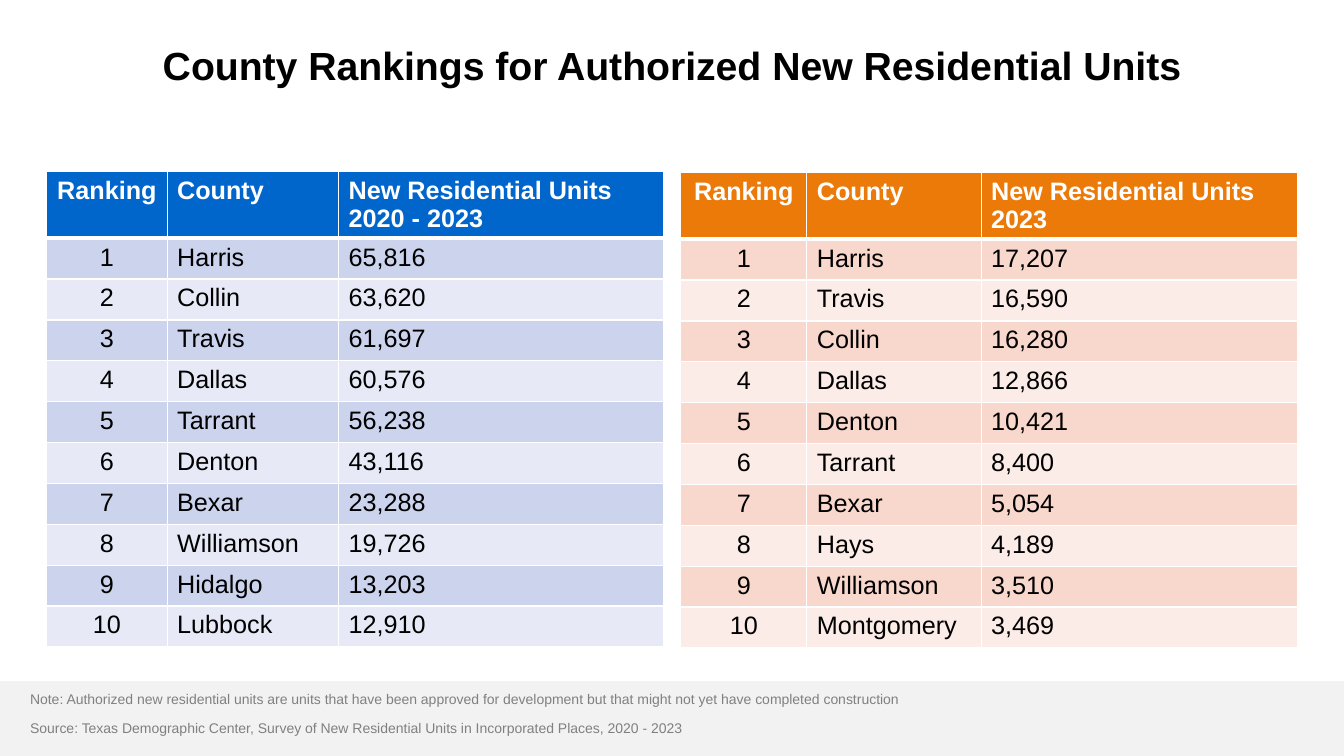
from lxml.etree import SubElement as Sub
from pptx import Presentation
from pptx.dml.color import RGBColor
from pptx.enum.shapes import MSO_SHAPE as Shape
from pptx.enum.text import MSO_ANCHOR as Anchor, PP_ALIGN as Align
from pptx.oxml.ns import qn
from pptx.util import Pt

WIDE, HIGH = 960, 540
HEAD, ROW = 47.2, 29.2

TOTAL = [
    ("Harris", "65,816"), ("Collin", "63,620"), ("Travis", "61,697"),
    ("Dallas", "60,576"), ("Tarrant", "56,238"), ("Denton", "43,116"),
    ("Bexar", "23,288"), ("Williamson", "19,726"), ("Hidalgo", "13,203"),
    ("Lubbock", "12,910"),
]
LATEST = [
    ("Harris", "17,207"), ("Travis", "16,590"), ("Collin", "16,280"),
    ("Dallas", "12,866"), ("Denton", "10,421"), ("Tarrant", "8,400"),
    ("Bexar", "5,054"), ("Hays", "4,189"), ("Williamson", "3,510"),
    ("Montgomery", "3,469"),
]
NOTES = [
    "Note: Authorized new residential units are units that have been approved "
    "for development but that might not yet have completed construction",
    "Source: Texas Demographic Center, Survey of New Residential Units in "
    "Incorporated Places, 2020 - 2023",
]


def paint(fill, color):
    fill.solid()
    fill.fore_color.rgb = RGBColor.from_string(color)


def add_run(para, text, size, color, bold=False):
    run = para.add_run()
    run.text = text
    font = run.font
    font.name, font.size, font.bold = "Arial", Pt(size), bold
    font.color.rgb = RGBColor.from_string(color)


def add_text(slide, box, lines, size, color, bold=False, align=Align.LEFT):
    frame = slide.shapes.add_textbox(*map(Pt, box)).text_frame
    frame.word_wrap = True
    frame.vertical_anchor = Anchor.MIDDLE
    for i, line in enumerate(lines):
        para = frame.add_paragraph() if i else frame.paragraphs[0]
        para.alignment, para.line_spacing = align, 0.9
        if i:
            para.space_before = Pt(10)
        add_run(para, line, size, color, bold)


def add_band(slide, top, color):
    """Fill the slide from top to its lower edge."""
    band = slide.shapes.add_shape(
        Shape.RECTANGLE, 0, Pt(top), Pt(WIDE), Pt(HIGH - top))
    band.shadow.inherit = False
    paint(band.fill, color)
    band.line.fill.background()


def edge(cell, side, width):
    """Draw a white border on one side: L, R, T or B."""
    props = cell._tc.get_or_add_tcPr()
    line = Sub(props, qn(f"a:ln{side}"), w=str(Pt(width)))
    Sub(Sub(line, qn("a:solidFill")), qn("a:srgbClr"), val="FFFFFF")


def add_ranks(slide, left, top, widths, years, units, fills):
    """Add a ranking table; fills are for the header, odd and even rows."""
    rows = [("Ranking", "County", f"New Residential Units {years}")]
    rows += [(str(i), *unit) for i, unit in enumerate(units, 1)]
    table = slide.shapes.add_table(
        len(rows), len(widths), Pt(left), Pt(top), Pt(sum(widths)),
        Pt(HEAD + ROW * len(units))).table
    for col, width in zip(table.columns, widths):
        col.width = Pt(width)
    for r, row in enumerate(rows):
        table.rows[r].height = Pt(ROW if r else HEAD)
        fill = fills[0] if r == 0 else fills[2 - r % 2]
        for c, text in enumerate(row):
            cell = table.cell(r, c)
            for side in "LRTB":
                thick = (r, side) in ((0, "B"), (1, "T"))
                edge(cell, side, 3 if thick else 1)
            paint(cell.fill, fill)
            para = cell.text_frame.paragraphs[0]
            para.alignment = Align.LEFT if c else Align.CENTER
            add_run(para, text, 18, "000000" if r else "FFFFFF", r == 0)


def main():
    deck = Presentation()
    deck.slide_width, deck.slide_height = Pt(WIDE), Pt(HIGH)
    slide = deck.slides.add_slide(deck.slide_layouts[6])
    add_band(slide, 486.5, "F2F2F2")
    add_ranks(slide, 33.4, 122.6, (86, 122.5, 232), "2020 - 2023", TOTAL,
              ("0066CC", "CCD3EC", "E7EAF6"))
    add_ranks(slide, 486.3, 123.3, (90, 124.5, 226), "2023", LATEST,
              ("EC7A08", "F8D7CC", "FBECE7"))
    add_text(slide, (14.4, 490, 745, 41), NOTES, 10, "808080")
    add_text(slide, (0, 9.4, WIDE, 78.5),
             ["County Rankings for Authorized New Residential Units"],
             28, "000000", True, Align.CENTER)
    deck.save("out.pptx")


if __name__ == "__main__":
    main()
